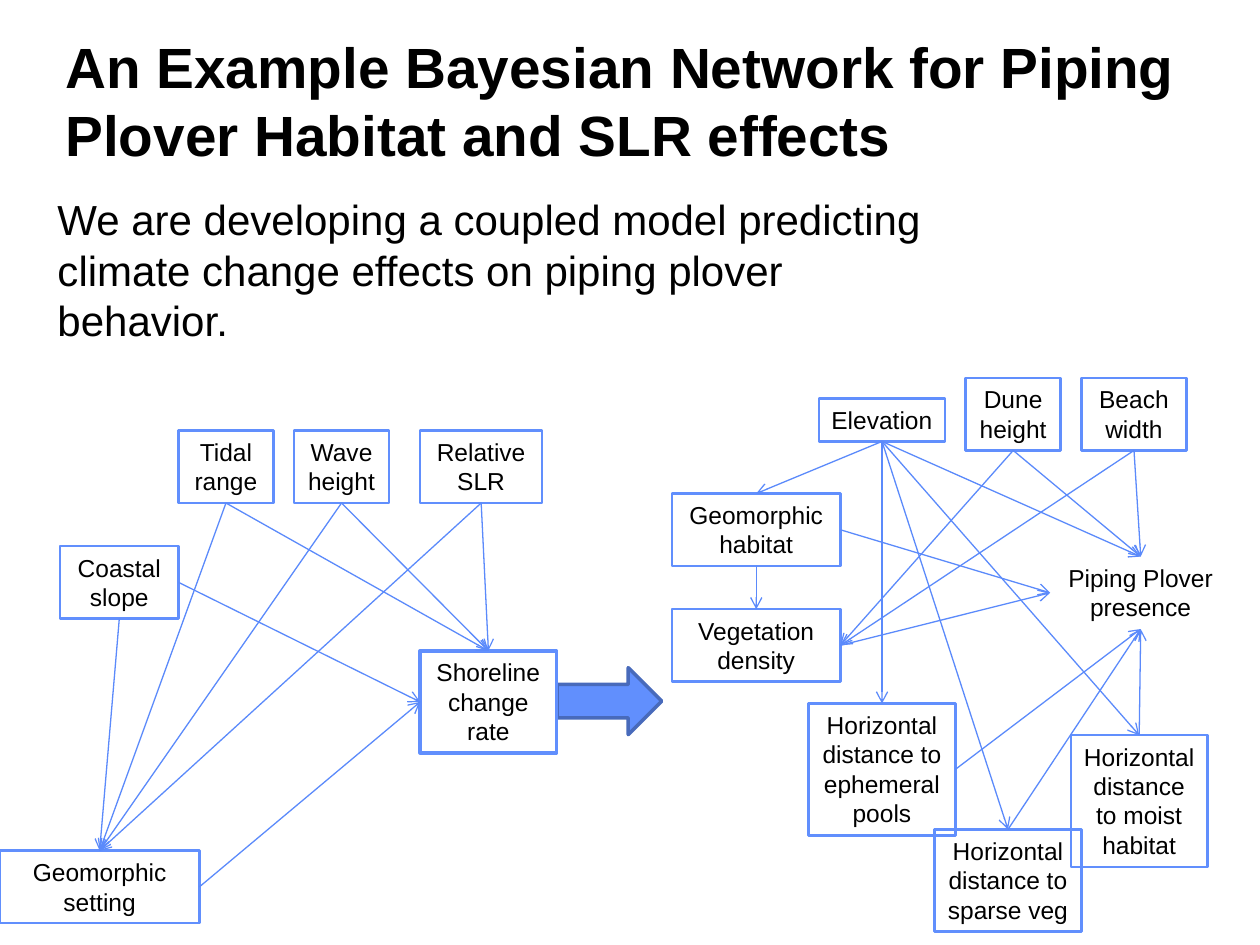
"""Build the slide on a Bayesian network for piping plover habitat."""
from lxml import etree
from pptx import Presentation
from pptx.dml.color import RGBColor
from pptx.enum.shapes import MSO_CONNECTOR, MSO_SHAPE
from pptx.enum.text import MSO_ANCHOR, MSO_AUTO_SIZE, PP_ALIGN
from pptx.oxml.ns import qn
from pptx.util import Cm, Pt

RECTANGLE, RIGHT_ARROW = MSO_SHAPE.RECTANGLE, MSO_SHAPE.RIGHT_ARROW
STRAIGHT = MSO_CONNECTOR.STRAIGHT
MIDDLE, TOP_ANCHOR = MSO_ANCHOR.MIDDLE, MSO_ANCHOR.TOP
NO_FIT, GROW = MSO_AUTO_SIZE.NONE, MSO_AUTO_SIZE.SHAPE_TO_FIT_TEXT
ALIGN_LEFT, ALIGN_CENTER = PP_ALIGN.LEFT, PP_ALIGN.CENTER
TOP, LEFT, BOTTOM, RIGHT = range(4)
BLUE, LINK_BLUE, DARK_BLUE, WHITE, BLACK = "618FFD", "5B8AFB", "486ABB", "FFFFFF", "000000"


def colour(value):
    return RGBColor.from_string(value)


def write(box, text, size, alignment, anchor, fit, bold=False):
    frame = box.text_frame
    frame.word_wrap = True
    frame.auto_size = fit
    frame.vertical_anchor = anchor
    frame.margin_left = frame.margin_right = Cm(0.25)
    frame.margin_top = frame.margin_bottom = Cm(0.13)
    para = frame.paragraphs[0]
    para.alignment = alignment
    span = para.add_run()
    span.text = text
    span.font.name = "Arial"
    span.font.size = Pt(size)
    span.font.bold = bold
    span.font.color.rgb = colour(BLACK)


deck = Presentation()
deck.slide_width, deck.slide_height = Cm(25.4), Cm(19.05)
page = deck.slides.add_slide(deck.slide_layouts[5])
page.background.fill.solid()
page.background.fill.fore_color.rgb = colour(WHITE)

title = page.shapes.title
title.left, title.top, title.width, title.height = Cm(1.07), Cm(0.43), Cm(23.06), Cm(3.18)
write(title, "An Example Bayesian Network for Piping Plover Habitat and SLR effects",
      32.4, ALIGN_LEFT, MIDDLE, NO_FIT, bold=True)

arrow = page.shapes.add_shape(RIGHT_ARROW, Cm(11.23), Cm(13.46), Cm(2.11), Cm(1.35))
arrow.shadow.inherit = False
arrow.fill.solid()
arrow.fill.fore_color.rgb = colour(BLUE)
arrow.line.color.rgb = colour(DARK_BLUE)
arrow.line.width = Pt(2)

nodes = [
    ("Vegetation density", 13.55, 12.28, 3.39, 2, BLUE, 1.5),
    ("Shoreline change rate", 8.47, 13.12, 2.75, 3, BLUE, 2),
    ("Coastal slope", 1.21, 11.01, 2.39, 2, BLUE, 1.5),
    ("Geomorphic setting", 0, 17.15, 4.02, 2, BLUE, 1.5),
    ("Tidal range", 3.6, 8.68, 1.91, 2, BLUE, 1.5),
    ("Wave height", 5.93, 8.68, 1.91, 2, BLUE, 1.5),
    ("Relative SLR", 8.47, 8.68, 2.46, 2, BLUE, 1.5),
    ("Elevation", 16.51, 8.04, 2.54, 1, BLUE, 1.5),
    ("Horizontal distance to sparse veg", 18.84, 16.72, 2.96, 3, BLUE, 1.5),
    ("Piping Plover presence", 21.17, 11.22, 3.65, 2, WHITE, 2),
    ("Horizontal distance to moist habitat", 21.59, 14.82, 2.75, 4, BLUE, 1.5),
    ("Beach width", 21.8, 7.62, 2.12, 2, BLUE, 1.5),
    ("Dune height", 19.47, 7.62, 1.91, 2, BLUE, 1.5),
    ("Geomorphic habitat", 13.55, 9.95, 3.39, 2, BLUE, 1.5),
    ("Horizontal distance to ephemeral pools", 16.3, 14.18, 2.96, 4, BLUE, 1.5),
]
boxes = {}
for text, left, top, width, rows, outline, weight in nodes:
    height = 0.86 + 0.6 * (rows - 1)
    box = page.shapes.add_shape(RECTANGLE, Cm(left), Cm(top), Cm(width), Cm(height))
    box.shadow.inherit = False
    box.fill.background()
    box.line.color.rgb = colour(outline)
    box.line.width = Pt(weight)
    write(box, text, 14, ALIGN_CENTER, TOP_ANCHOR, GROW)
    boxes[text.split()[-1] if text.startswith("Horizontal") else text] = box

links = [
    ("Relative SLR", BOTTOM, "Shoreline change rate", TOP),
    ("Wave height", BOTTOM, "Shoreline change rate", TOP),
    ("Tidal range", BOTTOM, "Shoreline change rate", TOP),
    ("Coastal slope", RIGHT, "Shoreline change rate", LEFT),
    ("Geomorphic setting", RIGHT, "Shoreline change rate", LEFT),
    ("Coastal slope", BOTTOM, "Geomorphic setting", TOP),
    ("Tidal range", BOTTOM, "Geomorphic setting", TOP),
    ("Wave height", BOTTOM, "Geomorphic setting", TOP),
    ("Relative SLR", BOTTOM, "Geomorphic setting", TOP),
    ("Beach width", BOTTOM, "Piping Plover presence", TOP),
    ("Dune height", BOTTOM, "Piping Plover presence", TOP),
    ("Elevation", BOTTOM, "Piping Plover presence", TOP),
    ("Geomorphic habitat", RIGHT, "Piping Plover presence", LEFT),
    ("Elevation", BOTTOM, "Geomorphic habitat", TOP),
    ("Vegetation density", RIGHT, "Piping Plover presence", LEFT),
    ("habitat", TOP, "Piping Plover presence", BOTTOM),
    ("veg", TOP, "Piping Plover presence", BOTTOM),
    ("pools", RIGHT, "Piping Plover presence", BOTTOM),
    ("Beach width", BOTTOM, "Vegetation density", RIGHT),
    ("Dune height", BOTTOM, "Vegetation density", RIGHT),
    ("Geomorphic habitat", BOTTOM, "Vegetation density", TOP),
    ("Elevation", BOTTOM, "habitat", TOP),
    ("Elevation", BOTTOM, "veg", TOP),
    ("Elevation", BOTTOM, "pools", TOP),
]
for cause, cause_side, effect, effect_side in links:
    link = page.shapes.add_connector(STRAIGHT, 0, 0, 0, 0)
    link.begin_connect(boxes[cause], cause_side)
    link.end_connect(boxes[effect], effect_side)
    link.line.color.rgb = colour(LINK_BLUE)
    link.line.width = Pt(0.75)
    etree.SubElement(link.line._get_or_add_ln(), qn("a:tailEnd"), type="arrow")
    etree.SubElement(link._element.spPr, qn("a:effectLst"))

summary = page.shapes.add_textbox(Cm(0.91), Cm(3.78), Cm(18.42), Cm(3.33))
write(summary, "We are developing a coupled model predicting climate change effects "
      "on piping plover behavior.", 24, ALIGN_LEFT, TOP_ANCHOR, GROW)

deck.save("out.pptx")
